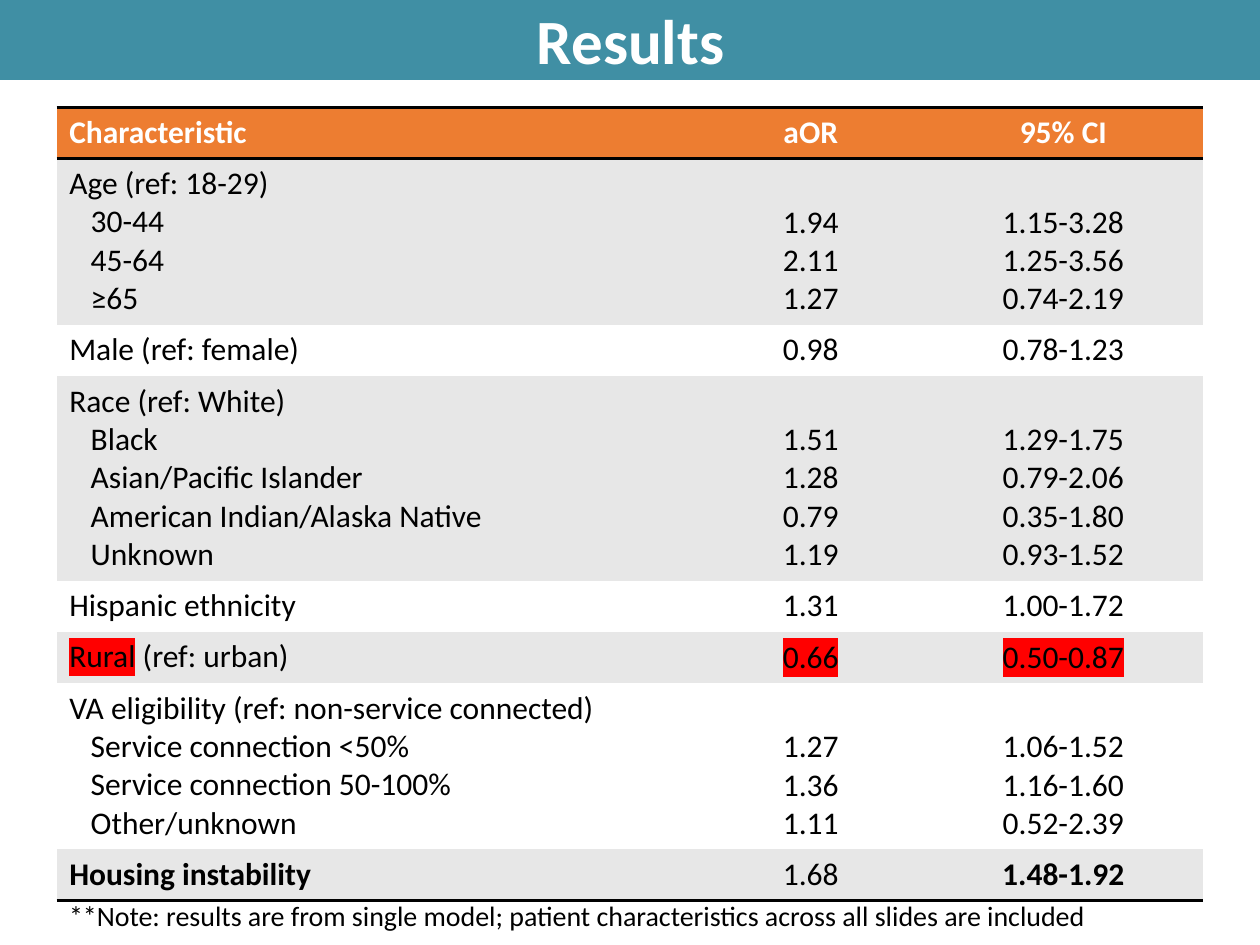
from dataclasses import dataclass
from typing import Any

from lxml import etree
from pptx import Presentation
from pptx.dml.color import RGBColor
from pptx.enum.shapes import MSO_SHAPE
from pptx.enum.text import MSO_ANCHOR, PP_ALIGN
from pptx.oxml.ns import qn
from pptx.util import Inches, Pt

RECTANGLE = MSO_SHAPE.RECTANGLE
TOP, MIDDLE, BOTTOM = MSO_ANCHOR.TOP, MSO_ANCHOR.MIDDLE, MSO_ANCHOR.BOTTOM
LEFT, CENTER = PP_ALIGN.LEFT, PP_ALIGN.CENTER

TEAL = RGBColor(0x40, 0x8F, 0xA4)
ORANGE = RGBColor(0xED, 0x7D, 0x31)
GRAY = RGBColor(0xE7, 0xE7, 0xE7)
WHITE = RGBColor(0xFF, 0xFF, 0xFF)
BLACK = RGBColor(0x00, 0x00, 0x00)
RED = RGBColor(0xFF, 0x00, 0x00)

GRID = Inches(0.05)
LINE_ROWS, PADDING_ROWS = 6.1, 2
PLAIN_TABLE = "{2D5ABB26-0587-4C30-8999-92F81FD0307C}"

HEADER = ["Characteristic", "aOR", "95% CI"]
GROUPS = [
    ("Age (ref: 18-29)", [
        ("30-44", "1.94", "1.15-3.28"),
        ("45-64", "2.11", "1.25-3.56"),
        ("≥65", "1.27", "0.74-2.19")]),
    ("Male (ref: female)", [("", "0.98", "0.78-1.23")]),
    ("Race (ref: White)", [
        ("Black", "1.51", "1.29-1.75"),
        ("Asian/Pacific Islander", "1.28", "0.79-2.06"),
        ("American Indian/Alaska Native", "0.79", "0.35-1.80"),
        ("Unknown", "1.19", "0.93-1.52")]),
    ("Hispanic ethnicity", [("", "1.31", "1.00-1.72")]),
    ("Rural (ref: urban)", [("", "0.66", "0.50-0.87")]),
    ("VA eligibility (ref: non-service connected)", [
        ("Service connection <50%", "1.27", "1.06-1.52"),
        ("Service connection 50-100%", "1.36", "1.16-1.60"),
        ("Other/unknown", "1.11", "0.52-2.39")]),
    ("Housing instability", [("", "1.68", "1.48-1.92")]),
]
HIGHLIGHTS = {"Rural (ref: urban)": "Rural", "0.66": "0.66", "0.50-0.87": "0.50-0.87"}
BOLD = {*HEADER, "Housing instability", "1.48-1.92"}


@dataclass
class SlideBuilder:
    slide: Any
    font: str = "Calibri"
    size: int = 18

    def area(self, *lengths):
        return [round(length * GRID) for length in lengths]

    def style(self, para, color, size, bold=False, align=LEFT):
        para.alignment = align
        para.font.name = self.font
        para.font.size = Pt(size)
        para.font.bold = bold
        para.font.color.rgb = color

    def banner(self, text, *area):
        box = self.slide.shapes.add_shape(RECTANGLE, *self.area(*area))
        box.shadow.inherit = False
        box.fill.solid()
        box.fill.fore_color.rgb = TEAL
        box.line.color.rgb = TEAL
        box.line.width = Pt(2)
        box.text_frame.vertical_anchor = MIDDLE
        para = box.text_frame.paragraphs[0]
        para.text = text
        self.style(para, WHITE, 36, True, CENTER)

    def note(self, text, *area):
        box = self.slide.shapes.add_textbox(*self.area(*area))
        box.text_frame.word_wrap = True
        para = box.text_frame.paragraphs[0]
        para.text = text
        self.style(para, BLACK, 16)

    def highlight(self, span):
        mark = etree.SubElement(span.font._element, qn("a:highlight"))
        etree.SubElement(mark, qn("a:srgbClr"), val=str(RED))

    def rule(self, cell, side):
        line = etree.Element(qn(f"a:ln{side}"), w=str(Pt(2)))
        fill = etree.SubElement(line, qn("a:solidFill"))
        etree.SubElement(fill, qn("a:srgbClr"), val=str(BLACK))
        cell._tc.get_or_add_tcPr().insert(0, line)

    def cell(self, cell, lines, fill, color, align):
        cell.fill.solid()
        cell.fill.fore_color.rgb = fill
        cell.vertical_anchor = TOP if align == LEFT else BOTTOM
        for index, text in enumerate(lines):
            frame = cell.text_frame
            para = frame.add_paragraph() if index else frame.paragraphs[0]
            self.style(para, color, self.size, text in BOLD, align)
            if align == LEFT and index:
                para._p.get_or_add_pPr().set("marL", str(Inches(0.17)))
            marked = HIGHLIGHTS.get(text, "")
            for part in filter(None, (marked, text[len(marked):])):
                span = para.add_run()
                span.text = part
                if part == marked:
                    self.highlight(span)

    def table(self, rows, columns, left, top):
        heights = [max(map(len, row)) * LINE_ROWS + PADDING_ROWS for row in rows]
        area = self.area(left, top, sum(columns), sum(heights))
        table = self.slide.shapes.add_table(len(rows), len(columns), *area).table
        table.first_row = table.horz_banding = False
        table._tbl.tblPr.find(qn("a:tableStyleId")).text = PLAIN_TABLE
        for column, width in zip(table.columns, self.area(*columns)):
            column.width = width
        for row, height in zip(table.rows, self.area(*heights)):
            row.height = height
        last = len(rows) - 1
        for index, row in enumerate(rows):
            fill = GRAY if index % 2 else WHITE
            for position, lines in enumerate(row):
                cell = table.cell(index, position)
                self.cell(cell, lines, fill if index else ORANGE,
                          BLACK if index else WHITE, CENTER if position else LEFT)
                if index in (0, last):
                    self.rule(cell, "B")
                if index == 0:
                    self.rule(cell, "T")


def table_rows():
    rows = [[[title] for title in HEADER]]
    for title, entries in GROUPS:
        names, ratios, intervals = zip(*entries)
        rows.append([[title, *filter(None, names)], ratios, intervals])
    return rows


def main():
    deck = Presentation()
    deck.slide_width, deck.slide_height = Inches(10), Inches(7.5)
    page = SlideBuilder(deck.slides.add_slide(deck.slide_layouts[6]))
    page.banner("Results", 0, 0, 200.2, 12.4)
    page.table(table_rows(), (101.8, 35.8, 44.4), 9, 17)
    page.note("**Note: results are from single model; patient characteristics "
              "across all slides are included", 9, 141.6, 182, 7.4)
    deck.save("out.pptx")


if __name__ == "__main__":
    main()
